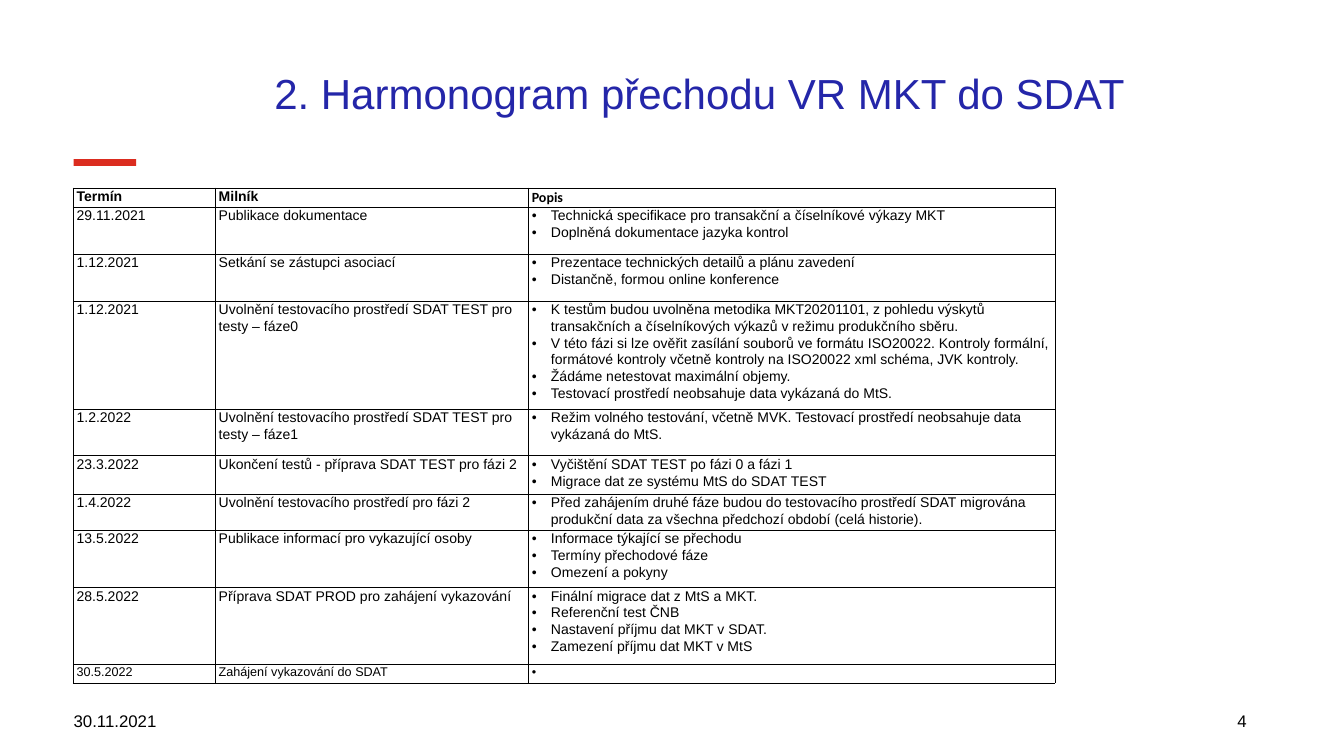
from lxml import etree
from pptx import Presentation
from pptx import util as u
from pptx.dml.color import RGBColor
from pptx.enum import shapes, text
from pptx.oxml import ns

Pt = u.Pt
BLUE = RGBColor(0x24, 0x26, 0xA9)
RED = RGBColor(0xDB, 0x2C, 0x1F)
BLACK = RGBColor(0, 0, 0)

HEADER = ("Termín", "Milník", "Popis")
COLUMN_WIDTHS = (203, 447.1, 752.4)
HEADER_HEIGHT = 27.4

# Row height, date, milestone, description bullets
MILESTONES = [
    (67, "29.11.2021", "Publikace dokumentace",
     ["Technická specifikace pro transakční a číselníkové výkazy MKT",
      "Doplněná dokumentace jazyka kontrol"]),
    (67, "1.12.2021", "Setkání se zástupci asociací",
     ["Prezentace technických detailů a plánu zavedení",
      "Distančně, formou online konference"]),
    (114.5, "1.12.2021", "Uvolnění testovacího prostředí SDAT TEST pro testy – fáze0",
     ["K testům budou uvolněna metodika MKT20201101, z pohledu výskytů "
      "transakčních a číselníkových výkazů v režimu produkčního sběru.",
      "V této fázi si lze ověřit zasílání souborů ve formátu ISO20022. Kontroly formální, "
      "formátové kontroly včetně kontroly na ISO20022 xml schéma, JVK kontroly.",
      "Žádáme netestovat maximální objemy.",
      "Testovací prostředí neobsahuje data vykázaná do MtS."]),
    (67, "1.2.2022", "Uvolnění testovacího prostředí SDAT TEST pro testy – fáze1",
     ["Režim volného testování, včetně MVK. Testovací prostředí neobsahuje data "
      "vykázaná do MtS."]),
    (54.7, "23.3.2022", "Ukončení testů - příprava SDAT TEST pro fázi 2",
     ["Vyčištění SDAT TEST po fázi 0 a fázi 1",
      "Migrace dat ze systému MtS do SDAT TEST"]),
    (51.1, "1.4.2022", "Uvolnění testovacího prostředí pro fázi 2",
     ["Před zahájením druhé fáze budou do testovacího prostředí SDAT migrována "
      "produkční data za všechna předchozí období (celá historie)."]),
    (82.1, "13.5.2022", "Publikace informací pro vykazující osoby",
     ["Informace týkající se přechodu", "Termíny přechodové fáze", "Omezení a pokyny"]),
    (109.4, "28.5.2022", "Příprava SDAT PROD pro zahájení vykazování",
     ["Finální migrace dat z MtS a MKT.", "Referenční test ČNB",
      "Nastavení příjmu dat MKT v SDAT.", "Zamezení příjmu dat MKT v MtS"]),
    (27.4, "30.5.2022", "Zahájení vykazování do SDAT", [" "]),
]


class SlideBuilder:
    """Holds the text style and the current slide."""

    def __init__(self, slide, font="Arial", color=BLACK):
        self.slide = slide
        self.font = font
        self.color = color

    def format(self, paragraph, size, color=None, font=None, bold=False):
        for run in paragraph.runs:
            run.font.size = Pt(size)
            run.font.name = font or self.font
            run.font.bold = bold
            run.font.color.rgb = color or self.color

    def bar(self, left, top, width, height, color):
        shape = self.slide.shapes.add_shape(
            shapes.MSO_SHAPE.RECTANGLE, Pt(left), Pt(top), Pt(width), Pt(height))
        shape.shadow.inherit = False
        shape.fill.solid()
        shape.fill.fore_color.rgb = color
        shape.line.fill.background()

    def text(self, left, top, width, height, words, size, color=None,
             anchor=text.MSO_ANCHOR.MIDDLE, align=text.PP_ALIGN.LEFT, inset=0):
        box = self.slide.shapes.add_textbox(Pt(left), Pt(top), Pt(width), Pt(height))
        frame = box.text_frame
        frame.word_wrap = True
        frame.vertical_anchor = anchor
        frame.margin_left = frame.margin_right = Pt(inset)
        frame.margin_top = frame.margin_bottom = Pt(inset / 2)
        frame.text = words
        paragraph = frame.paragraphs[0]
        paragraph.alignment = align
        self.format(paragraph, size, color)

    def table(self, left, top, widths, heights):
        frame = self.slide.shapes.add_table(
            len(heights), len(widths), Pt(left), Pt(top), Pt(sum(widths)), Pt(sum(heights)))
        table = frame.table
        table.first_row = table.horz_banding = False
        for column, width in zip(table.columns, widths):
            column.width = Pt(width)
        for row, height in zip(table.rows, heights):
            row.height = Pt(height)
        return table

    def cell(self, cell, lines, size=20, bullets=False, font=None, bold=False):
        cell.margin_left = cell.margin_right = Pt(5)
        cell.margin_top = cell.margin_bottom = 0
        self.borders(cell)
        cell.fill.background()
        cell.text_frame.text = "\n".join(lines)
        for paragraph in cell.text_frame.paragraphs:
            if bullets:
                self.bullet(paragraph)
            paragraph.line_spacing = 1.07
            self.format(paragraph, size, font=font, bold=bold)

    def borders(self, cell):
        properties = cell._tc.get_or_add_tcPr()
        for side in ("a:lnL", "a:lnR", "a:lnT", "a:lnB"):
            line = etree.SubElement(properties, ns.qn(side), w=str(Pt(1)))
            fill = etree.SubElement(line, ns.qn("a:solidFill"))
            etree.SubElement(fill, ns.qn("a:srgbClr"), val=str(self.color))

    def bullet(self, paragraph, indent=27.4):
        properties = paragraph._p.get_or_add_pPr()
        properties.set("marL", str(Pt(indent)))
        properties.set("indent", str(-Pt(indent)))
        etree.SubElement(properties, ns.qn("a:buFont"), typeface=self.font)
        etree.SubElement(properties, ns.qn("a:buChar"), char="•")


def main():
    presentation = Presentation()
    presentation.slide_width = Pt(1919.52)
    presentation.slide_height = Pt(1080)
    builder = SlideBuilder(presentation.slides.add_slide(presentation.slide_layouts[6]))

    # Title and accent bar
    builder.bar(105.1, 227.5, 89.3, 9.4, RED)
    builder.text(391.7, 95.8, 1433.5, 145.4, "2. Harmonogram přechodu VR MKT do SDAT",
                 60, BLUE, anchor=text.MSO_ANCHOR.TOP)

    # Footer
    builder.text(105.1, 1000.8, 432, 57.6, "30.11.2021", 24)
    builder.text(1355.8, 1000.8, 432, 57.6, "4", 24, align=text.PP_ALIGN.RIGHT, inset=7.2)

    # Schedule table
    heights = [HEADER_HEIGHT] + [milestone[0] for milestone in MILESTONES]
    table = builder.table(104.4, 268.6, COLUMN_WIDTHS, heights)
    for column, heading in enumerate(HEADER):
        font = "Calibri" if heading == "Popis" else None
        builder.cell(table.cell(0, column), [heading], font=font, bold=True)
    for row, (_, date, milestone, description) in enumerate(MILESTONES, start=1):
        size = 18 if row == len(MILESTONES) else 20
        builder.cell(table.cell(row, 0), [date], size)
        builder.cell(table.cell(row, 1), [milestone], size)
        builder.cell(table.cell(row, 2), description, size, bullets=True)

    presentation.save("out.pptx")


if __name__ == "__main__":
    main()
